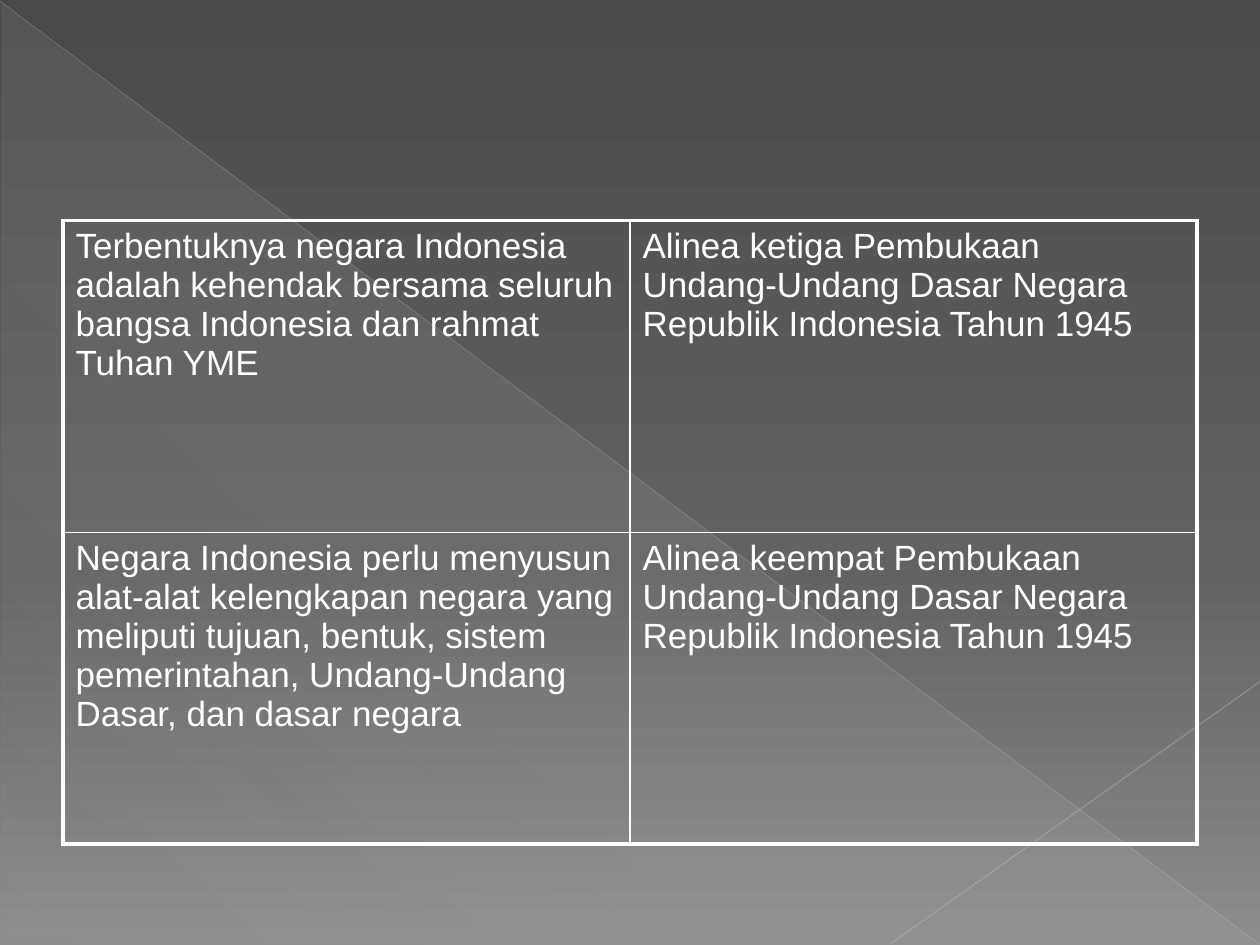
from lxml import etree
from pptx import Presentation
from pptx.dml.color import RGBColor
from pptx.enum.shapes import MSO_CONNECTOR, MSO_SHAPE
from pptx.oxml.ns import qn
from pptx.util import Inches, Pt

ROWS = [
    ("Terbentuknya negara Indonesia adalah kehendak bersama seluruh bangsa Indonesia dan rahmat Tuhan YME",
     "Alinea ketiga Pembukaan Undang-Undang Dasar Negara Republik Indonesia Tahun 1945"),
    ("Negara Indonesia perlu menyusun alat-alat kelengkapan negara yang meliputi tujuan, bentuk, sistem "
     "pemerintahan, Undang-Undang Dasar, dan dasar negara",
     "Alinea keempat Pembukaan Undang-Undang Dasar Negara Republik Indonesia Tahun 1945"),
]
DIAGONALS = [
    {"ends": (0, 0.01, 9.99, 7.49), "color": "BFBFBF", "width": 0.39, "alpha": 35},
    {"ends": (10, 5.41, 7.07, 7.49), "color": "C6C6C6", "width": 0.47, "alpha": 45},
]
THEME = {
    "backdrop": [(0, "4A4A4A", 100), (60, "626262", 100), (100, "8C8C8C", 100)],
    "veil": [(0, "D2D2D2", 10), (70, "D2D2D2", 8), (100, "D2D2D2", 1)],
    "border": "FFFFFF",
    "outer": 2.25,
    "inner": 1,
    "space_before": 20,
    "font": {"name": "Arial", "size": Pt(20), "bold": False},
    "text": "FFFFFF",
}
TABLE_BOX = [Inches(v) for v in (0.5, 1.75, 9, 4.95)]


def add(parent, tag, **attributes):
    return etree.SubElement(parent, qn(tag), {k: str(v) for k, v in attributes.items()})


def add_color(parent, color, alpha=100):
    value = add(parent, "a:srgbClr", val=color)
    if alpha < 100:
        add(value, "a:alpha", val=alpha * 1000)


def set_gradient(fill, owner, stops, angle):
    fill.gradient()
    gradient = owner.find(".//" + qn("a:gradFill"))
    for child in list(gradient):
        gradient.remove(child)
    stop_list = add(gradient, "a:gsLst")
    for position, color, alpha in stops:
        add_color(add(stop_list, "a:gs", pos=position * 1000), color, alpha)
    add(gradient, "a:lin", ang=angle * 60000, scaled=0)


def add_diagonal(slide, ends, color, width, alpha):
    diagonal = slide.shapes.add_connector(MSO_CONNECTOR.STRAIGHT, *map(Inches, ends))
    diagonal.line.width = Pt(width)
    diagonal.line.color.rgb = RGBColor.from_string(color)
    properties = diagonal.element.spPr
    add(properties.find(".//" + qn("a:srgbClr")), "a:alpha", val=alpha * 1000)
    add(properties, "a:effectLst")


def set_borders(cell, outer_sides):
    properties = cell._tc.get_or_add_tcPr()
    for side in ("L", "R", "T", "B"):
        width = THEME["outer"] if side in outer_sides else THEME["inner"]
        line = add(properties, f"a:ln{side}", w=Pt(width))
        add_color(add(line, "a:solidFill"), THEME["border"])


def write(cell, statement):
    cell.text = statement
    paragraph = cell.text_frame.paragraphs[0]
    spacing = add(paragraph._p.get_or_add_pPr(), "a:spcBef")
    add(spacing, "a:spcPct", val=THEME["space_before"] * 1000)
    font = paragraph.runs[0].font
    for attribute, value in THEME["font"].items():
        setattr(font, attribute, value)
    font.color.rgb = RGBColor.from_string(THEME["text"])


def add_statements(slide):
    last_row, last_column = len(ROWS) - 1, len(ROWS[0]) - 1
    table = slide.shapes.add_table(len(ROWS), len(ROWS[0]), *TABLE_BOX).table
    table.first_row = table.horz_banding = False
    for r, row in enumerate(ROWS):
        for c, statement in enumerate(row):
            cell = table.cell(r, c)
            write(cell, statement)
            edges = {"L": c == 0, "R": c == last_column, "T": r == 0, "B": r == last_row}
            set_borders(cell, [side for side, is_outer in edges.items() if is_outer])
            cell.fill.background()


def main():
    deck = Presentation()
    deck.slide_width, deck.slide_height = Inches(10), Inches(7.5)
    slide = deck.slides.add_slide(deck.slide_layouts[6])
    set_gradient(slide.background.fill, slide.element, THEME["backdrop"], 90)

    veil = slide.shapes.add_shape(MSO_SHAPE.RIGHT_TRIANGLE, *map(Inches, (0.01, 0.02, 9.99, 7.48)))
    veil.shadow.inherit = False
    veil.line.fill.background()
    set_gradient(veil.fill, veil.element, THEME["veil"], 133)

    for diagonal in DIAGONALS:
        add_diagonal(slide, **diagonal)
    add_statements(slide)
    deck.save("out.pptx")


if __name__ == "__main__":
    main()
